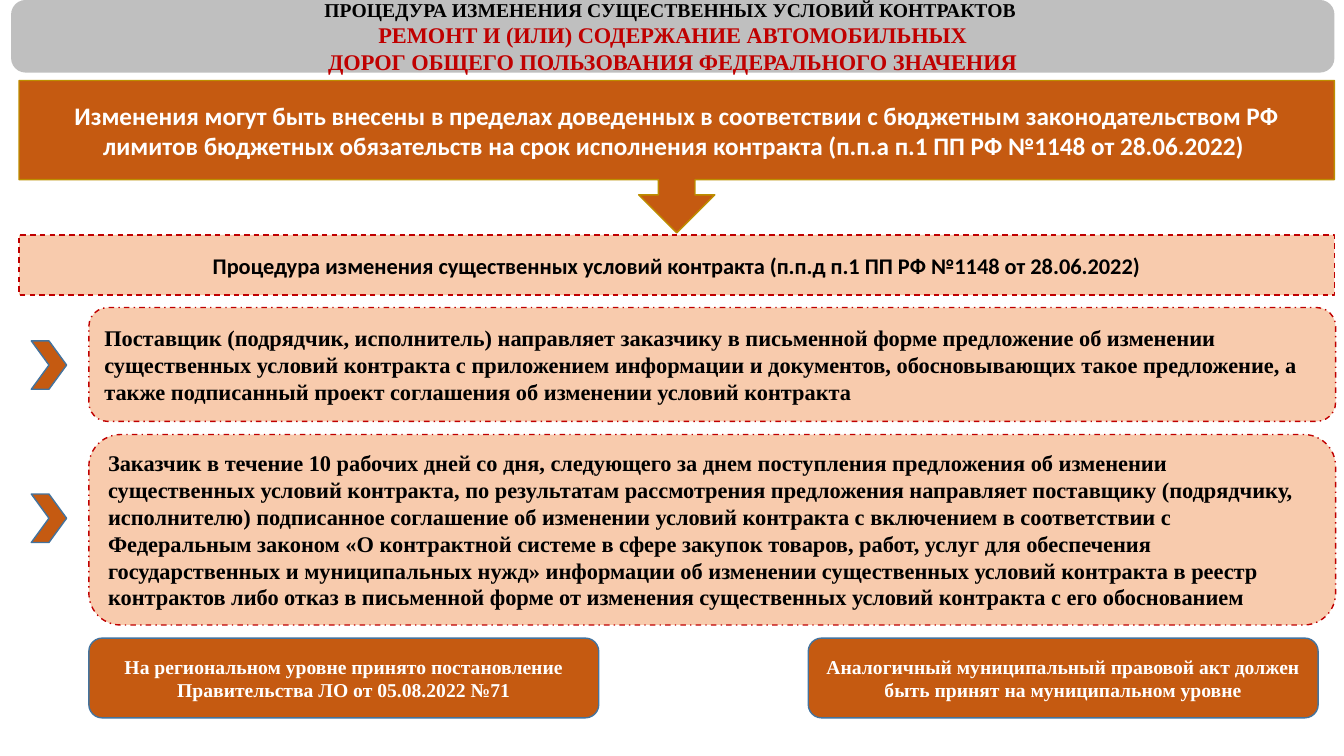
from dataclasses import dataclass

from pptx import Presentation
from pptx.dml.color import RGBColor
from pptx.enum.dml import MSO_LINE
from pptx.enum.shapes import MSO_SHAPE
from pptx.enum.text import MSO_ANCHOR, MSO_AUTO_SIZE, PP_ALIGN
from pptx.util import Cm, Pt

RECTANGLE, ROUNDED = MSO_SHAPE.RECTANGLE, MSO_SHAPE.ROUNDED_RECTANGLE
CALLOUT, CHEVRON = MSO_SHAPE.DOWN_ARROW_CALLOUT, MSO_SHAPE.CHEVRON
DASH, DASH_DOT = MSO_LINE.DASH, MSO_LINE.DASH_DOT
LEFT, CENTER = PP_ALIGN.LEFT, PP_ALIGN.CENTER
MIDDLE, NO_FIT = MSO_ANCHOR.MIDDLE, MSO_AUTO_SIZE.NONE


@dataclass(frozen=True)
class Theme:
    serif: str = "Times New Roman"
    sans: str = "Calibri"
    small: int = 14
    medium: int = 16
    large: int = 18
    black: str = "000000"
    white: str = "FFFFFF"
    gray: str = "BFBFBF"
    red: str = "C00000"
    orange: str = "C55A11"
    peach: str = "F8CBAD"
    blue: str = "43739E"
    gold: str = "BD8E00"


THEME = Theme()

# Content
TITLE_LINES = [
    ("ПРОЦЕДУРА ИЗМЕНЕНИЯ СУЩЕСТВЕННЫХ УСЛОВИЙ КОНТРАКТОВ ", THEME.small, THEME.black),
    ("РЕМОНТ И (ИЛИ) СОДЕРЖАНИЕ АВТОМОБИЛЬНЫХ", THEME.medium, THEME.red),
    ("ДОРОГ ОБЩЕГО ПОЛЬЗОВАНИЯ ФЕДЕРАЛЬНОГО ЗНАЧЕНИЯ", THEME.medium, THEME.red),
]
LIMITS = (
    "Изменения могут быть внесены в пределах доведенных в соответствии с бюджетным "
    "законодательством РФ лимитов бюджетных обязательств на срок исполнения контракта "
    "(п.п.а п.1 ПП РФ №1148 от 28.06.2022) "
)
PROCEDURE = (
    "Процедура изменения существенных условий контракта "
    "(п.п.д п.1 ПП РФ №1148 от 28.06.2022)"
)
# Step text, box height and chevron top in cm
STEPS = [
    ("Поставщик (подрядчик, исполнитель) направляет заказчику в письменной форме "
     "предложение об изменении существенных условий контракта с приложением информации "
     "и документов, обосновывающих такое предложение, а также подписанный проект "
     "соглашения об изменении условий контракта", 2.87, 8.59),
    ("Заказчик в течение 10 рабочих дней со дня, следующего за днем поступления "
     "предложения об изменении существенных условий контракта, по результатам "
     "рассмотрения предложения направляет поставщику (подрядчику, исполнителю) "
     "подписанное соглашение об изменении условий контракта с включением в соответствии "
     "с Федеральным законом «О контрактной системе в сфере закупок товаров, работ, услуг "
     "для обеспечения государственных и муниципальных нужд» информации об изменении "
     "существенных условий контракта в реестр контрактов либо отказ в письменной форме "
     "от изменения существенных условий контракта с его обоснованием", 4.8, 12.45),
]
# Note text and left edge in cm
NOTES = [
    ("На региональном уровне принято постановление Правительства ЛО от 05.08.2022 №71",
     2.24),
    ("Аналогичный муниципальный правовой акт должен быть принят на муниципальном уровне",
     20.37),
]

# Layout in cm
BANNER_BOX = (0.28, 0, 33.35, 1.83)
LIMITS_BOX = (0.48, 2.03, 33.15, 3.84)
PROCEDURE_BOX = (0.48, 5.92, 33.15, 1.52)
STEP_LEFT, STEP_TOP, STEP_WIDTH, STEP_GAP = 2.24, 7.75, 31.42, 0.33
CHEVRON_LEFT, CHEVRON_SIZE = 0.79, (0.89, 1.22)
NOTE_SIZE = (12.85, 2.01)


def apply_format(target, values):
    for name, value in values.items():
        setattr(target, name, value)


def write_lines(shape, lines, font, alignment):
    frame = shape.text_frame
    apply_format(frame, {"word_wrap": True, "auto_size": NO_FIT,
                         "vertical_anchor": MIDDLE})
    for index, (text, size, color) in enumerate(lines):
        paragraph = frame.add_paragraph() if index else frame.paragraphs[0]
        apply_format(paragraph, {"alignment": alignment, "line_spacing": 1.0})
        run = paragraph.add_run()
        run.text = text
        apply_format(run.font, {"name": font, "size": Pt(size), "bold": True})
        run.font.color.rgb = RGBColor.from_string(color)


def add_block(slide, kind, box, fill, line=None, dash=None, adjustments=()):
    shape = slide.shapes.add_shape(kind, *map(Cm, box))
    shape.shadow.inherit = False
    shape.fill.solid()
    shape.fill.fore_color.rgb = RGBColor.from_string(fill)
    if line:
        shape.line.color.rgb = RGBColor.from_string(line)
        apply_format(shape.line, {"width": Pt(1), "dash_style": dash})
    else:
        shape.line.fill.background()
    for index, value in enumerate(adjustments):
        shape.adjustments[index] = value
    return shape


def main():
    presentation = Presentation()
    apply_format(presentation, {"slide_width": Cm(33.87), "slide_height": Cm(19.05)})
    slide = presentation.slides.add_slide(presentation.slide_layouts[5])

    # Title on a gray banner
    banner = add_block(slide, ROUNDED, BANNER_BOX, THEME.gray, adjustments=[0.2])
    title = slide.shapes.title
    apply_format(title, dict(zip(("left", "top", "width", "height"),
                                 map(Cm, BANNER_BOX))))
    write_lines(title, TITLE_LINES, THEME.serif, CENTER)
    banner.element.addnext(title.element)

    # Budget limits with an arrow down to the procedure heading
    procedure = add_block(slide, RECTANGLE, PROCEDURE_BOX, THEME.peach, THEME.red, DASH)
    write_lines(procedure, [(PROCEDURE, THEME.medium, THEME.black)], THEME.sans, CENTER)
    limits = add_block(slide, CALLOUT, LIMITS_BOX, THEME.orange, THEME.gold,
                       adjustments=[0.24, 0.25, 0.25, 0.65])
    write_lines(limits, [(LIMITS, THEME.large, THEME.white)], THEME.sans, CENTER)

    # Steps stacked with equal gaps, each with a chevron
    top = STEP_TOP
    for text, height, chevron_top in STEPS:
        step = add_block(slide, ROUNDED, (STEP_LEFT, top, STEP_WIDTH, height),
                         THEME.peach, THEME.red, DASH_DOT)
        write_lines(step, [(text, THEME.medium, THEME.black)], THEME.serif, LEFT)
        add_block(slide, CHEVRON, (CHEVRON_LEFT, chevron_top, *CHEVRON_SIZE),
                  THEME.orange, THEME.blue)
        top += height + STEP_GAP

    # Notes below the steps
    for text, left in NOTES:
        note = add_block(slide, ROUNDED, (left, top, *NOTE_SIZE),
                         THEME.orange, THEME.blue)
        write_lines(note, [(text, THEME.small, THEME.white)], THEME.serif, CENTER)

    presentation.save("out.pptx")


if __name__ == "__main__":
    main()
